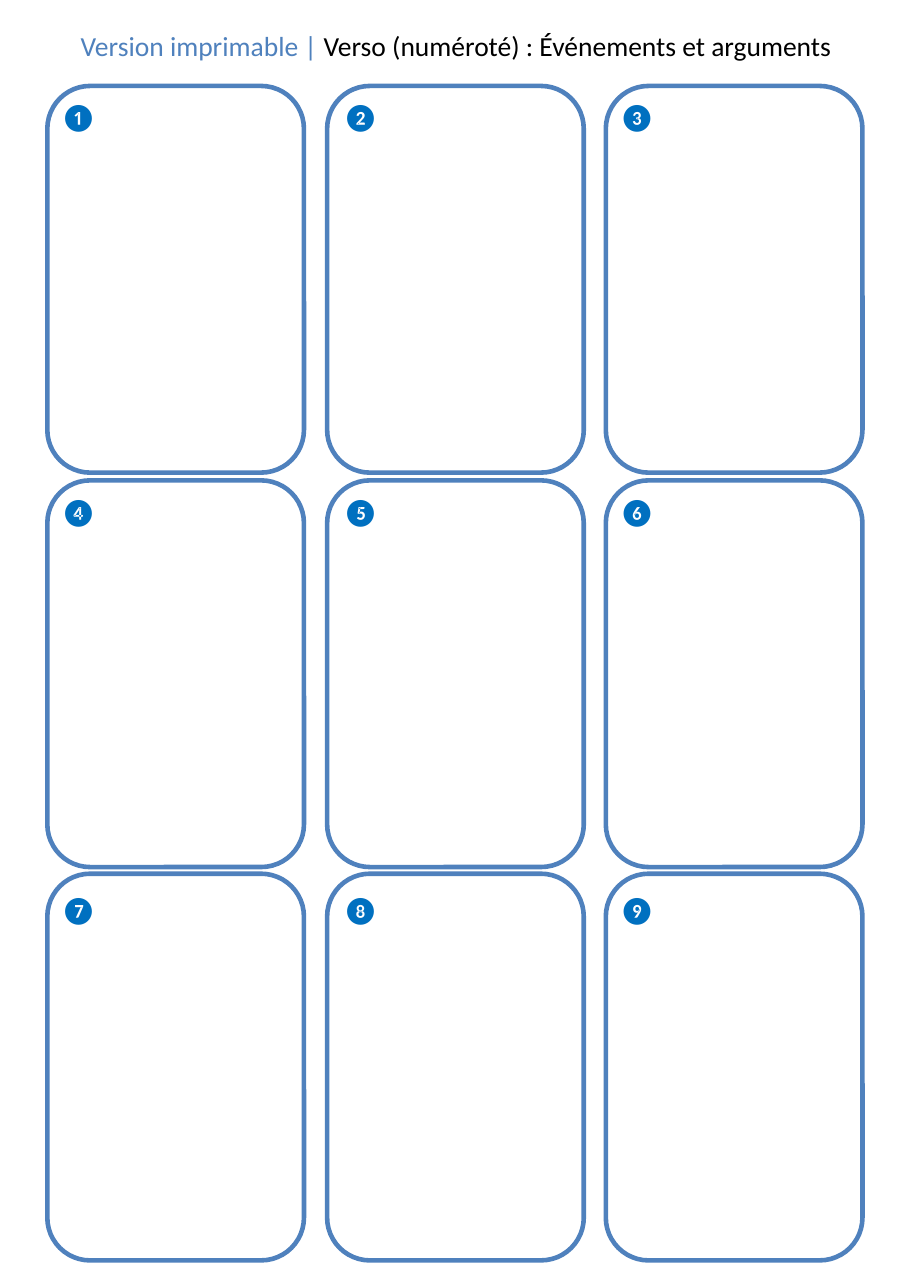
from pptx import Presentation
from pptx.dml.color import RGBColor
from pptx.enum import shapes, text
from pptx.util import Inches, Pt

WHITE = RGBColor(0xFF, 0xFF, 0xFF)
BLACK = RGBColor(0x00, 0x00, 0x00)
BORDER = RGBColor(0x4F, 0x81, 0xBD)
NUMBER = RGBColor(0x00, 0x70, 0xC0)

CARD_W, CARD_H = 2.33, 3.51
CARD_LEFTS = (0.43, 2.97, 5.5)
CARD_TOPS = (0.78, 4.36, 7.93)
NUMBER_LEFTS = (0.45, 3.01, 5.52)
NUMBER_TOPS = (0.86, 4.44, 8.06)
NUMBERS = "❶❷❸❹❺❻❼❽❾"

prs = Presentation()
prs.slide_width, prs.slide_height = Inches(8.27), Inches(11.69)
slide = prs.slides.add_slide(prs.slide_layouts[6])


def add_text(left, top, width, wrap, align, runs):
    """Add a one-line text box from (text, colour) pairs."""
    sp = slide.shapes.add_textbox(Inches(left), Inches(top), Inches(width), Inches(0.4))
    tf = sp.text_frame
    tf.word_wrap = wrap
    tf.auto_size = text.MSO_AUTO_SIZE.SHAPE_TO_FIT_TEXT
    p = tf.paragraphs[0]
    p.alignment = align
    for words, color in runs:
        r = p.add_run()
        r.text = words
        r.font.name = "Calibri"
        r.font.size = Pt(18)
        r.font.color.rgb = color


# Numbered cards, row by row
for i, number in enumerate(NUMBERS):
    row, col = divmod(i, 3)
    card = slide.shapes.add_shape(
        shapes.MSO_SHAPE.FLOWCHART_ALTERNATE_PROCESS,
        Inches(CARD_LEFTS[col]), Inches(CARD_TOPS[row]), Inches(CARD_W), Inches(CARD_H))
    card.shadow.inherit = False
    card.fill.solid()
    card.fill.fore_color.rgb = WHITE
    card.line.color.rgb = BORDER
    card.line.width = Pt(3)
    add_text(NUMBER_LEFTS[col], NUMBER_TOPS[row], 0.54, False,
             text.PP_ALIGN.LEFT, [(number, NUMBER)])

# Page title
add_text(0.45, 0.21, 7.38, True, text.PP_ALIGN.CENTER,
         [("Version imprimable | ", BORDER),
          ("Verso (numéroté) : Événements et arguments", BLACK)])

prs.save("out.pptx")
